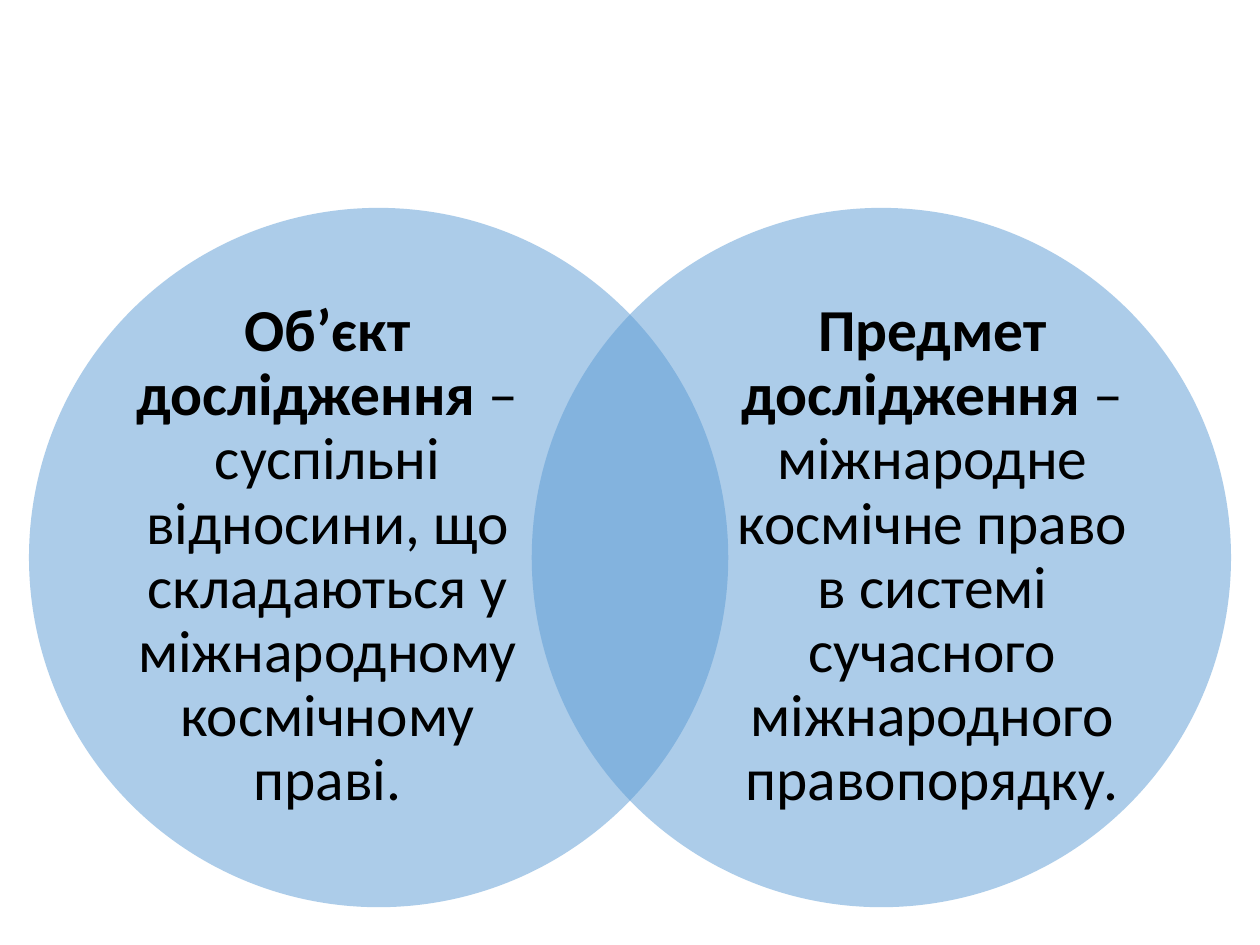
"""Build a slide with two overlapping circles defining a study's object and subject."""
from lxml import etree
from pptx import Presentation
from pptx import util as u
from pptx.dml.color import RGBColor
from pptx.enum import shapes, text
from pptx.oxml.ns import qn

COLORS = {"circle": "5B9BD5", "text": "000000"}
DIAMETER = 5.55
CIRCLE_TOP = 1.65
DEFINITIONS = [
    (0.23, 1, "Об’єкт дослідження ",
     "– суспільні відносини, що складаються у міжнародному космічному праві."),
    (4.22, 5.8, "Предмет дослідження ",
     "– міжнародне космічне право в системі сучасного міжнародного правопорядку."),
]


def add_circle(s, left):
    """Add a half-transparent circle without an outline."""
    sp = s.shapes.add_shape(shapes.MSO_SHAPE.OVAL, u.Inches(left), u.Inches(CIRCLE_TOP),
                            u.Inches(DIAMETER), u.Inches(DIAMETER))
    sp.shadow.inherit = False
    sp.line.fill.background()
    sp.fill.solid()
    sp.fill.fore_color.rgb = RGBColor.from_string(COLORS["circle"])
    color = sp.fill._xPr.find(qn("a:solidFill"))[0]
    etree.SubElement(color, qn("a:alpha"), val="50000")


def add_definition(s, left, term, meaning):
    """Add a centred text with a bold term followed by its meaning."""
    sp = s.shapes.add_textbox(u.Inches(left), u.Inches(2.3), u.Inches(3.2), u.Inches(4.24))
    tf = sp.text_frame
    tf.word_wrap = True
    tf.vertical_anchor = text.MSO_ANCHOR.MIDDLE
    tf.margin_left = tf.margin_right = tf.margin_top = tf.margin_bottom = 0
    p = tf.paragraphs[0]
    p.alignment = text.PP_ALIGN.CENTER
    p.line_spacing = 0.9
    for words, bold in ((term, True), (meaning, False)):
        r = p.add_run()
        r.text = words
        r.font.name = "Calibri"
        r.font.size = u.Pt(34)
        r.font.bold = bold
        r.font.color.rgb = RGBColor.from_string(COLORS["text"])


def main():
    """Create the slide and save the presentation."""
    prs = Presentation()
    prs.slide_width, prs.slide_height = u.Inches(10), u.Inches(7.5)
    s = prs.slides.add_slide(prs.slide_layouts[6])
    for circle_left, text_left, term, meaning in DEFINITIONS:
        add_circle(s, circle_left)
        add_definition(s, text_left, term, meaning)
    prs.save("out.pptx")


if __name__ == "__main__":
    main()
